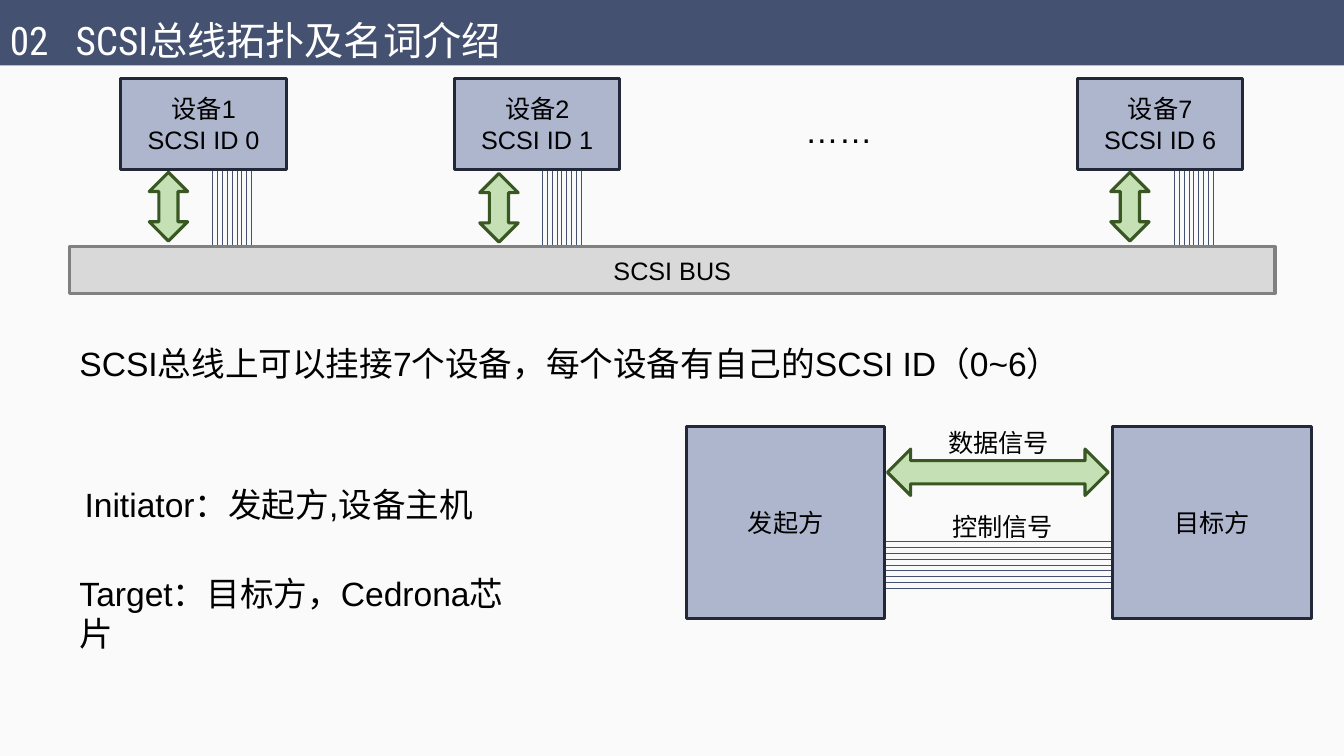
from dataclasses import dataclass

from lxml import etree
from pptx import Presentation
from pptx.dml.color import RGBColor
from pptx.enum.shapes import MSO_CONNECTOR, MSO_SHAPE
from pptx.enum.text import MSO_ANCHOR, PP_ALIGN
from pptx.oxml.ns import qn
from pptx.util import Pt

RECT = MSO_SHAPE.RECTANGLE
ARROW = MSO_SHAPE.UP_DOWN_ARROW
STRAIGHT = MSO_CONNECTOR.STRAIGHT
LEFT, CENTER = PP_ALIGN.LEFT, PP_ALIGN.CENTER
TOP, MIDDLE = MSO_ANCHOR.TOP, MSO_ANCHOR.MIDDLE

PAPER = RGBColor(0xFA, 0xFA, 0xFA)
WHITE = RGBColor(0xFF, 0xFF, 0xFF)
BLACK = RGBColor(0, 0, 0)
NAVY = RGBColor(0x45, 0x51, 0x71)
BLUE = RGBColor(0xAE, 0xB6, 0xCD)
DARK = RGBColor(0x22, 0x28, 0x38)
SILVER = RGBColor(0xD9, 0xD9, 0xD9)
GRAY = RGBColor(0x80, 0x80, 0x80)
LIME = RGBColor(0xC5, 0xE0, 0xB4)
GREEN = RGBColor(0x38, 0x57, 0x23)

WIRES = 9


@dataclass
class Device:
    text: str
    left: float
    arrow: float
    wire: float
    drop: float


@dataclass
class Party:
    text: str
    left: float


@dataclass
class Label:
    text: str
    left: float
    top: float
    width: float
    size: float = 24


DEVICES = [
    Device("设备1\nSCSI ID 0", 86.4, 106.6, 151.9, 0),
    Device("设备2\nSCSI ID 1", 324.7, 342.7, 387.4, 0.8),
    Device("设备7\nSCSI ID 6", 769.7, 793.4, 838.8, 0),
]
PARTIES = [Party("发起方", 490.3), Party("目标方", 794.9)]
LABELS = [
    Label("Initiator：发起方,设备主机", 53.3, 342, 294.5),
    Label("Target：目标方，Cedrona芯片", 49.7, 405.4, 340.6),
    Label("……", 568.1, 74.9, 77),
    Label("SCSI总线上可以挂接7个设备，每个设备有自己的SCSI ID（0~6）", 49.7, 241.2, 722.2),
    Label("数据信号", 670.3, 301.7, 91.4, 18),
    Label("控制信号", 673.2, 361.4, 91.4, 18),
]


def write(shape, text: str, size: float = 18, font: str = "Arial",
          color: RGBColor = BLACK, align=CENTER, anchor=MIDDLE) -> None:
    frame = shape.text_frame
    frame.word_wrap = True
    frame.vertical_anchor = anchor
    frame.text = text
    for para in frame.paragraphs:
        para.alignment = align
        for run in para.runs:
            run.font.size = Pt(size)
            run.font.name = font
            run.font.color.rgb = color


def block(slide, kind, left: float, top: float, width: float, height: float,
          fill: RGBColor, edge: RGBColor | None = None, turn: float = 0):
    shape = slide.shapes.add_shape(kind, Pt(left), Pt(top), Pt(width), Pt(height))
    shape.shadow.inherit = False
    shape.rotation = turn
    shape.fill.solid()
    shape.fill.fore_color.rgb = fill
    if edge is None:
        shape.line.fill.background()
    else:
        shape.line.color.rgb = edge
        shape.line.width = Pt(2.25)
    return shape


def box(slide, left: float, top: float, width: float, height: float):
    return slide.shapes.add_textbox(Pt(left), Pt(top), Pt(width), Pt(height))


def wire(slide, x1: float, y1: float, x2: float, y2: float) -> None:
    line = slide.shapes.add_connector(STRAIGHT, Pt(x1), Pt(y1), Pt(x2), Pt(y2))
    line.line.color.rgb = NAVY
    line.line.width = Pt(0.5)
    etree.SubElement(line._element.spPr, qn("a:effectLst"))


def header(slide) -> None:
    block(slide, RECT, 0, 0, 960, 46.8, NAVY)
    title = box(slide, 0, 7.9, 553, 38.9)
    write(title, "02\tSCSI总线拓扑及名词介绍", size=28, font="Roboto Condensed",
          color=WHITE, align=LEFT, anchor=TOP)
    props = title.text_frame.paragraphs[0]._p.get_or_add_pPr()
    tabs = etree.SubElement(props, qn("a:tabLst"))
    etree.SubElement(tabs, qn("a:tab"), pos=str(Pt(47)), algn="l")


def topology(slide) -> None:
    for dev in DEVICES:
        for i in range(WIRES):
            x = dev.wire + 3.47 * i
            wire(slide, x, 116.6 + dev.drop, x, 179.3 + dev.drop)
    bus = block(slide, RECT, 49.7, 176.4, 861.1, 33.1, SILVER, GRAY)
    write(bus, "SCSI BUS")
    for dev in DEVICES:
        card = block(slide, RECT, dev.left, 56.2, 118.1, 64.8, BLUE, DARK)
        write(card, dev.text)
        block(slide, ARROW, dev.arrow, 123.1 + dev.drop, 27.4, 49, LIME, GREEN)


def signals(slide) -> None:
    for i in range(WIRES):
        y = 386.6 + 4.23 * i
        wire(slide, 794.9, y, 630, y)
    for party in PARTIES:
        card = block(slide, RECT, party.left, 304.6, 141.8, 137.5, BLUE, DARK)
        write(card, party.text)
    block(slide, ARROW, 696.2, 258.5, 33.1, 157.7, LIME, GREEN, turn=90)


def main() -> None:
    deck = Presentation()
    deck.slide_width, deck.slide_height = Pt(960), Pt(540)
    slide = deck.slides.add_slide(deck.slide_layouts[6])
    slide.background.fill.solid()
    slide.background.fill.fore_color.rgb = PAPER
    header(slide)
    topology(slide)
    signals(slide)
    for label in LABELS:
        area = box(slide, label.left, label.top, label.width, label.size * 1.5)
        write(area, label.text, size=label.size, align=LEFT, anchor=TOP)
    deck.save("out.pptx")


if __name__ == "__main__":
    main()
